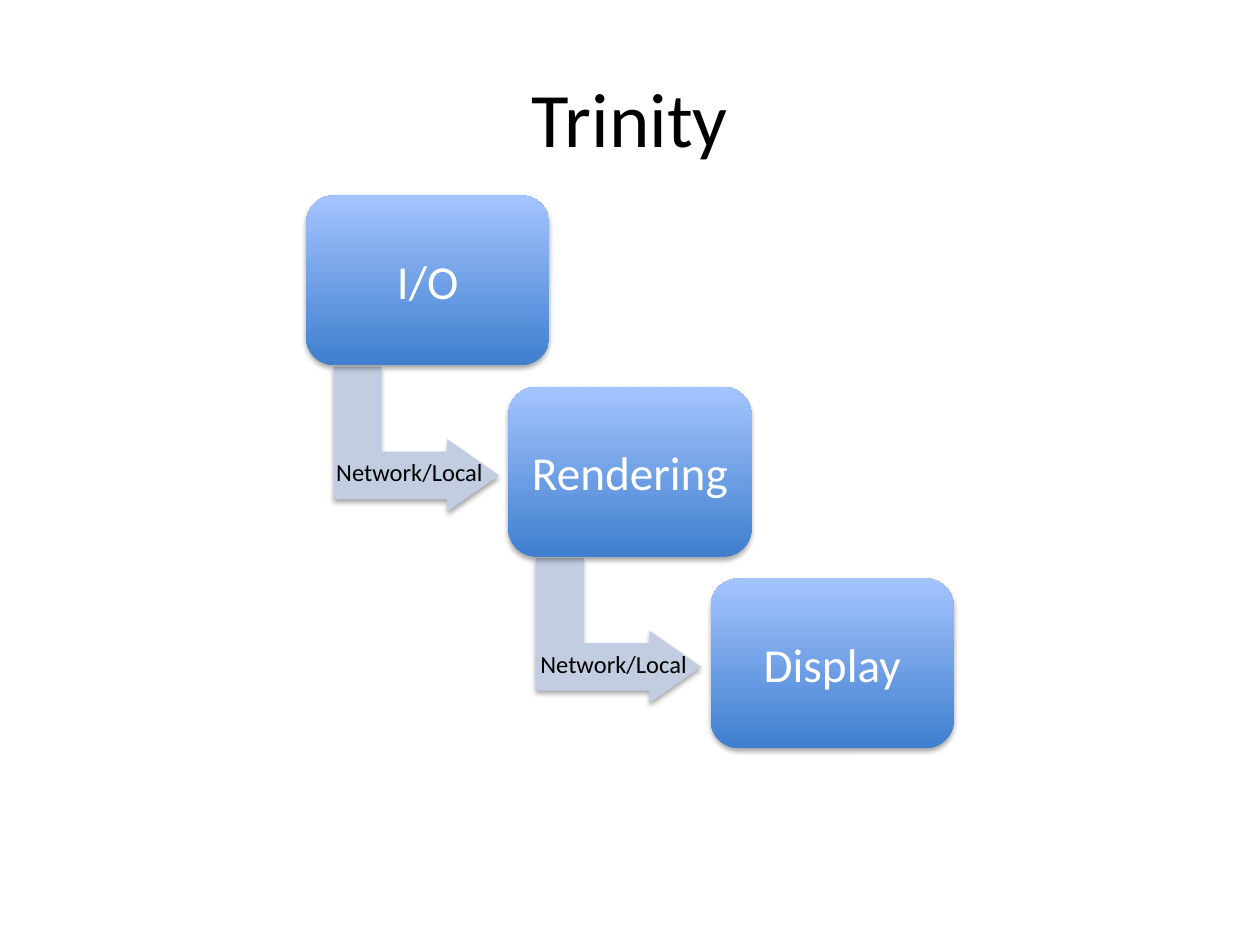
from dataclasses import dataclass

from lxml import etree
from pptx import Presentation
from pptx.dml.color import RGBColor
from pptx.enum.shapes import MSO_SHAPE
from pptx.enum.text import MSO_ANCHOR, PP_ALIGN
from pptx.oxml.ns import qn
from pptx.util import Inches, Pt

ROUNDED = MSO_SHAPE.ROUNDED_RECTANGLE
BENT_ARROW = MSO_SHAPE.BENT_UP_ARROW
MIDDLE, TOP = MSO_ANCHOR.MIDDLE, MSO_ANCHOR.TOP
CENTER, LEFT = PP_ALIGN.CENTER, PP_ALIGN.LEFT

BLACK = RGBColor(0x00, 0x00, 0x00)
WHITE = RGBColor(0xFF, 0xFF, 0xFF)
ARROW_FILL = RGBColor(0xC2, 0xCD, 0xE1)
STAGE_BOTTOM = RGBColor(0x3F, 0x7F, 0xCE)
STAGE_TOP = RGBColor(0xA4, 0xC4, 0xFF)

STAGE_WIDTH, STAGE_HEIGHT = 1.93, 1.35
STEP_X, STEP_Y = 1.605, 1.52
FIRST_LEFT, FIRST_TOP = 2.43, 1.55


@dataclass
class Box:
    left: float
    top: float
    width: float
    height: float

    def lengths(self) -> list:
        return [Inches(v) for v in (self.left, self.top, self.width, self.height)]


@dataclass
class Label:
    text: str
    box: Box


def write_text(shape, text: str, size: int, color: RGBColor,
               align=CENTER, anchor=MIDDLE, wrap: bool = False) -> None:
    frame = shape.text_frame
    frame.word_wrap = wrap
    frame.vertical_anchor = anchor
    paragraph = frame.paragraphs[0]
    paragraph.text = text
    paragraph.alignment = align
    font_format = {"name": "Calibri", "size": Pt(size)}
    for name, value in font_format.items():
        setattr(paragraph.font, name, value)
    paragraph.font.color.rgb = color


def add_text(slide, label: Label, size: int, **text_format) -> None:
    shape = slide.shapes.add_textbox(*label.box.lengths())
    write_text(shape, label.text, size, BLACK, **text_format)


def add_soft_shadow(shape) -> None:
    shape.shadow.inherit = False
    effects = shape._element.spPr.find(qn("a:effectLst"))
    shadow = etree.SubElement(
        effects, qn("a:outerShdw"), blurRad=str(Pt(3.1)), dist=str(Pt(1.8)),
        dir="5400000", rotWithShape="0")
    color = etree.SubElement(shadow, qn("a:srgbClr"), val="000000")
    etree.SubElement(color, qn("a:alpha"), val="35000")


def add_arrow(slide, box: Box) -> None:
    shape = slide.shapes.add_shape(BENT_ARROW, *box.lengths())
    shape.rotation = 90
    for index, value in enumerate((0.328, 0.25, 0.358)):
        shape.adjustments[index] = value
    shape.fill.solid()
    shape.fill.fore_color.rgb = ARROW_FILL
    shape.line.fill.background()
    add_soft_shadow(shape)


def add_stage(slide, stage: Label) -> None:
    shape = slide.shapes.add_shape(ROUNDED, *stage.box.lengths())
    shape.adjustments[0] = 0.167
    shape.fill.gradient()
    shape.fill.gradient_angle = 90
    for stop, color in zip(shape.fill.gradient_stops, (STAGE_BOTTOM, STAGE_TOP)):
        stop.color.rgb = color
    shape.line.fill.background()
    add_soft_shadow(shape)
    write_text(shape, stage.text, 27, WHITE)


def main() -> None:
    presentation = Presentation()
    presentation.slide_width = Inches(10)
    presentation.slide_height = Inches(7.5)
    slide = presentation.slides.add_slide(presentation.slide_layouts[6])

    # Title
    add_text(slide, Label("Trinity", Box(0.5, 0.3, 9, 1.25)), 44, wrap=True)

    # Staircase of stages, each with an arrow to the next
    names = ("I/O", "Rendering", "Display")
    for index, name in enumerate(names):
        left = FIRST_LEFT + index * STEP_X
        top = FIRST_TOP + index * STEP_Y
        if index < len(names) - 1:
            add_arrow(slide, Box(left + 0.3, top + 1.28, 1.15, 1.31))
        add_stage(slide, Label(name, Box(left, top, STAGE_WIDTH, STAGE_HEIGHT)))

    # Arrow labels
    for index in range(len(names) - 1):
        box = Box(2.57 + index * 1.62, 3.58 + index * STEP_Y, 1.38, 0.34)
        add_text(slide, Label("Network/Local", box), 14, align=LEFT, anchor=TOP)

    presentation.save("out.pptx")


if __name__ == "__main__":
    main()
